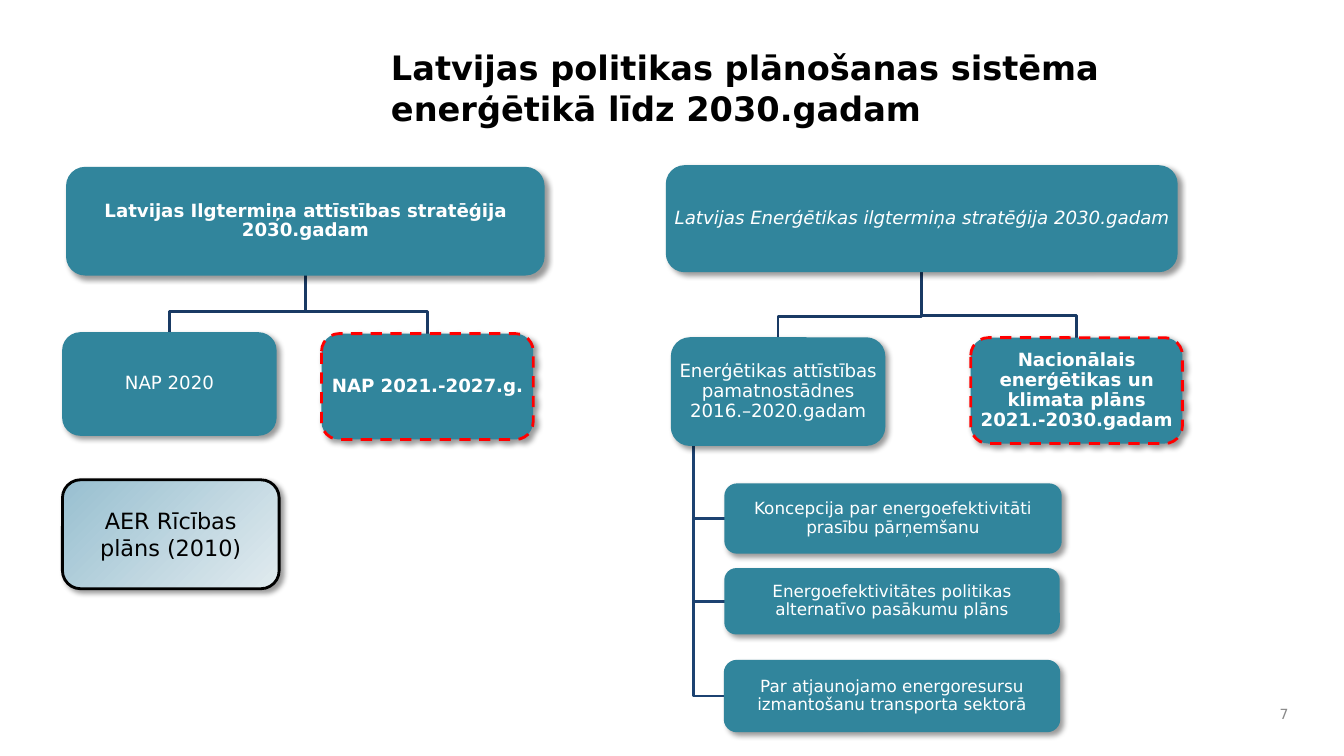
"""Build the slide on Latvia's energy policy planning system up to 2030."""
from dataclasses import dataclass

from lxml.etree import SubElement
from pptx import Presentation
from pptx.dml.color import RGBColor
from pptx.enum.dml import MSO_LINE
from pptx.enum.shapes import MSO_SHAPE as SHAPE
from pptx.enum.text import MSO_ANCHOR as ANCHOR, PP_ALIGN as ALIGN
from pptx.oxml.ns import qn
from pptx.util import Pt

FONT = "DejaVu Sans"
TEAL, RED, BLACK, WHITE, GREY = "31859C", "FF0000", "000000", "FFFFFF", "898989"
FORK_BLUE, COMB_BLUE = "193A64", "1C4271"
FORK_RISE, SPINE_INDENT = 15.8, 15.1


@dataclass(frozen=True)
class Box:
    text: str
    x: float
    y: float
    w: float
    h: float
    size: float = 13
    bold: bool = False
    italic: bool = False
    color: str = WHITE
    edge: str = TEAL
    dashed: bool = False
    gradient: tuple[str, ...] = ()
    inset: tuple[float, float] = (0.7, 0.7)
    spacing: float = 0.9
    align: ALIGN = ALIGN.CENTER
    anchor: ANCHOR = ANCHOR.MIDDLE

    @property
    def cx(self) -> float:
        return self.x + self.w / 2

    @property
    def cy(self) -> float:
        return self.y + self.h / 2

    @property
    def bottom(self) -> float:
        return self.y + self.h


PLAIN = {"inset": (7.2, 3.6), "spacing": 1}
PLANNED = {"bold": True, "edge": RED, "dashed": True}

TITLE = Box("Latvijas politikas plānošanas sistēma enerģētikā līdz 2030.gadam",
            272.2, 30.2, 640, 81.4, 24, bold=True, color=BLACK,
            align=ALIGN.LEFT, anchor=ANCHOR.TOP, **PLAIN)
NUMBER = Box("7", 895.7, 498.2, 31.7, 23.8, 10, color=GREY, align=ALIGN.RIGHT, **PLAIN)

STRATEGY = Box("Latvijas Ilgtermiņa attīstības stratēģija 2030.gadam",
               48.2, 120.2, 339.8, 75.6, bold=True)
NAPS = [
    Box("NAP 2020", 45.4, 238.3, 151.2, 72),
    Box("NAP 2021.-2027.g.", 229.7, 238.3, 151.2, 75.6, **PLANNED),
]
ENERGY = Box("Latvijas Enerģētikas ilgtermiņa stratēģija 2030.gadam",
             476.6, 119, 363.6, 74.4, italic=True)
GUIDELINES = Box("Enerģētikas attīstības pamatnostādnes 2016.–2020.gadam",
                 480.2, 241.9, 151.2, 75.6)
CLIMATE = Box("Nacionālais enerģētikas un klimata plāns 2021.-2030.gadam",
              693.4, 241.2, 151.2, 75.6, **PLANNED)
MEASURES = [
    Box("Koncepcija par energoefektivitāti prasību pārņemšanu",
        518.4, 346.3, 239, 48.2, 12),
    Box("Energoefektivitātes politikas alternatīvo pasākumu plāns",
        518.4, 406.8, 237.6, 45.4, 12),
    Box("Par atjaunojamo energoresursu izmantošanu transporta sektorā",
        518, 472.3, 238.3, 49.7, 12),
]
ACTION = Box("AER Rīcības plāns (2010)", 44.6, 342.7, 154.8, 77.8, 16,
             color=BLACK, edge=BLACK, gradient=("98BFD0", "E1EBEF"), **PLAIN)


def rgb(color: str) -> RGBColor:
    """Turn a hex string into a colour."""
    return RGBColor.from_string(color)


def set_attrs(obj: object, formats: dict) -> None:
    """Set every attribute in a dict of format values."""
    for name, value in formats.items():
        setattr(obj, name, value)


def write(sp, box: Box) -> None:
    """Write the box's text into a shape."""
    tf = sp.text_frame
    side, top = map(Pt, box.inset)
    set_attrs(tf, {"word_wrap": True, "vertical_anchor": box.anchor,
                   "margin_left": side, "margin_right": side,
                   "margin_top": top, "margin_bottom": top})
    p = tf.paragraphs[0]
    set_attrs(p, {"alignment": box.align, "line_spacing": box.spacing})
    r = p.add_run()
    r.text = box.text
    set_attrs(r.font, {"name": FONT, "size": Pt(box.size),
                       "bold": box.bold, "italic": box.italic})
    r.font.color.rgb = rgb(box.color)


def add_shadow(sp) -> None:
    """Give a shape a soft shadow to the lower right."""
    sp.shadow.inherit = False
    effects = sp._element.spPr.find(qn("a:effectLst"))
    shadow = SubElement(effects, qn("a:outerShdw"), blurRad=str(Pt(4)),
                        dist=str(Pt(3)), dir="2700000", rotWithShape="0")
    tone = SubElement(shadow, qn("a:srgbClr"), val=BLACK)
    SubElement(tone, qn("a:alpha"), val="40000")


def add_label(s, box: Box) -> None:
    """Draw text without an outline."""
    write(s.shapes.add_textbox(*map(Pt, (box.x, box.y, box.w, box.h))), box)


def add_box(s, box: Box) -> None:
    """Draw a rounded box with its text."""
    frame = map(Pt, (box.x, box.y, box.w, box.h))
    sp = s.shapes.add_shape(SHAPE.ROUNDED_RECTANGLE, *frame)
    if box.gradient:
        sp.fill.gradient()
        sp.fill.gradient_angle = 315
        for stop, color in zip(sp.fill.gradient_stops, box.gradient):
            stop.color.rgb = rgb(color)
    else:
        sp.fill.solid()
        sp.fill.fore_color.rgb = rgb(TEAL)
    sp.line.color.rgb = rgb(box.edge)
    sp.line.width = Pt(2)
    if box.dashed:
        sp.line.dash_style = MSO_LINE.DASH
    add_shadow(sp)
    write(sp, box)


def add_path(s, points: list[tuple[float, float]], color: str) -> None:
    """Draw an open line through the points."""
    start, *rest = [(Pt(x), Pt(y)) for x, y in points]
    builder = s.shapes.build_freeform(*start)
    builder.add_line_segments(rest, close=False)
    sp = builder.convert_to_shape()
    sp.fill.background()
    sp.shadow.inherit = False
    sp.line.color.rgb = rgb(color)
    sp.line.width = Pt(2)


def add_fork(s, parent: Box, children: list[Box]) -> None:
    """Join a parent's bottom to the top of each child."""
    for child in children:
        bend = child.y - FORK_RISE
        add_path(s, [(parent.cx, parent.bottom), (parent.cx, bend),
                     (child.cx, bend), (child.cx, child.y)], FORK_BLUE)


def add_comb(s, parent: Box, children: list[Box]) -> None:
    """Join a parent's bottom to the left side of each child."""
    spine = parent.x + SPINE_INDENT
    for child in children:
        add_path(s, [(spine, parent.bottom), (spine, child.cy),
                     (child.x, child.cy)], COMB_BLUE)


def main() -> None:
    """Draw the slide and save it."""
    prs = Presentation()
    set_attrs(prs, {"slide_width": Pt(960), "slide_height": Pt(540)})
    s = prs.slides.add_slide(prs.slide_layouts[6])
    add_label(s, NUMBER)
    add_fork(s, ENERGY, [GUIDELINES, CLIMATE])
    add_comb(s, GUIDELINES, MEASURES)
    add_fork(s, STRATEGY, NAPS)
    for box in [STRATEGY, *NAPS, ENERGY, GUIDELINES, *MEASURES, CLIMATE, ACTION]:
        add_box(s, box)
    add_label(s, TITLE)
    prs.save("out.pptx")


if __name__ == "__main__":
    main()
